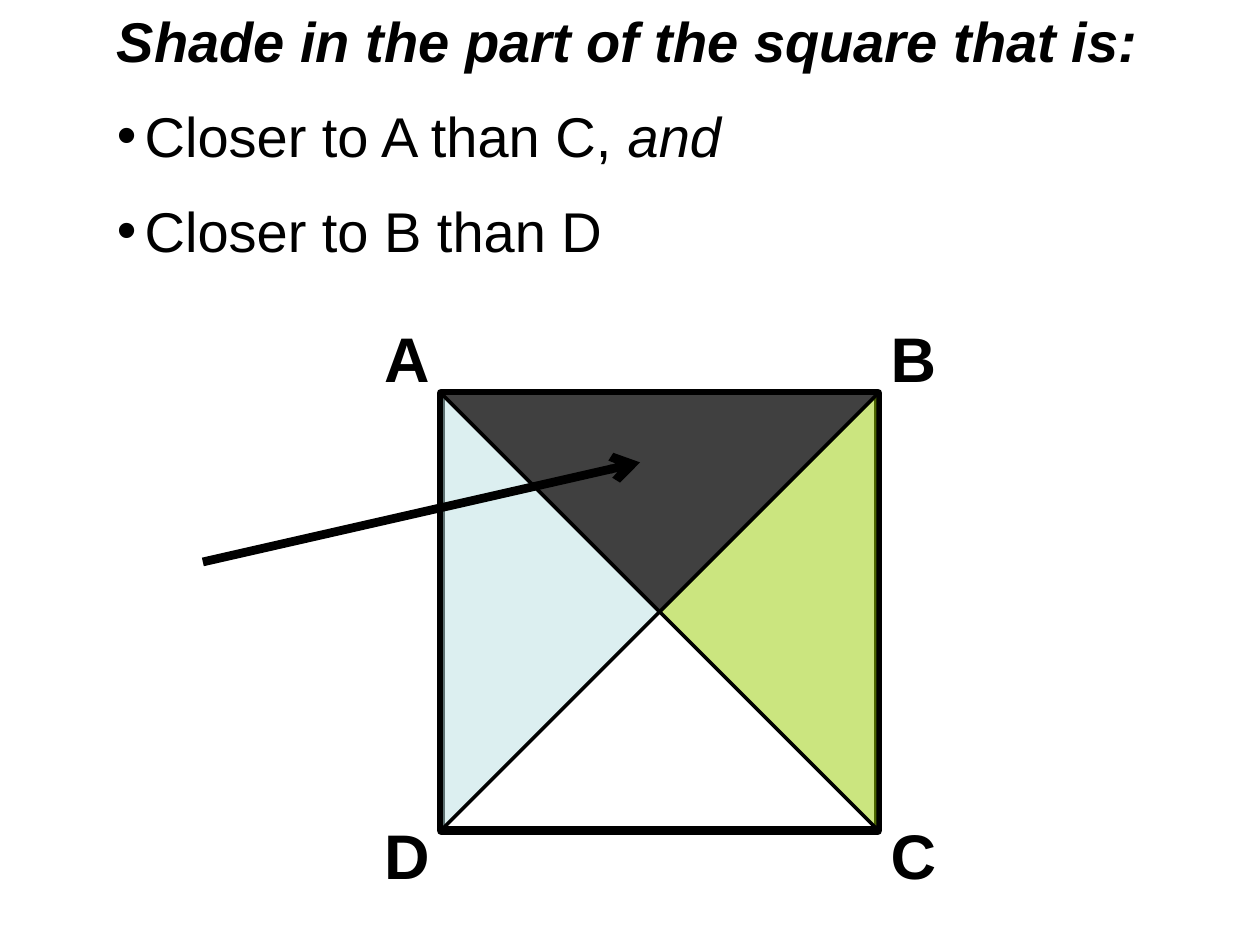
import pptx
import pptx.util
import pptx.dml.color
import pptx.enum.shapes
import pptx.oxml
import pptx.oxml.ns
import lxml.etree

Inches, Pt = pptx.util.Inches, pptx.util.Pt
KINDS = pptx.enum.shapes.MSO_SHAPE
qn = pptx.oxml.ns.qn

COLORS = {"ink": "000000", "blue": "BBE0E3", "green": "99CC00", "dark": "404040"}
BOLD = {"bold": True, "italic": False}
PLAIN = {"bold": False, "italic": False}
SLANT = {"bold": False, "italic": True}
TITLE = {"bold": True, "italic": True}

# Each paragraph: bulleted or not, then its runs
TASK = [
    (False, [("Shade in the part of the square that is:", TITLE)]),
    (True, [("Closer to A than C, ", PLAIN), ("and", SLANT)]),
    (True, [("Closer to B than D", PLAIN)]),
]
LEFT, TOP, SIDE = 3.5, 3.12, 3.47
TAG_W, TAG_H = 0.63, 0.7
TAGS = [
    ("A", 2.95, 2.49),
    ("B", LEFT + SIDE, 2.49),
    ("C", LEFT + SIDE, 6.43),
    ("D", 2.95, 6.43),
]
# Kind, height, turn, fill, opacity in percent
PARTS = [
    (KINDS.RIGHT_TRIANGLE, SIDE, 90, "blue", 50),
    (KINDS.RIGHT_TRIANGLE, SIDE, 180, "green", 50),
    (KINDS.ISOSCELES_TRIANGLE, SIDE / 2, 180, "dark", 100),
]
ARROW = (1.61, 4.46, 5.08, 3.67)
INDENT = 0.22


def rgb(name):
    return pptx.dml.color.RGBColor.from_string(COLORS[name])


def add(parent, tag, **attrs):
    return lxml.etree.SubElement(parent, qn(tag), attrs)


def ink(line, width):
    line.color.rgb = rgb("ink")
    line.width = Pt(width)


def write(slide, box, paras, size):
    """Add a text box whose paragraphs are spaced by half a line."""
    frame = slide.shapes.add_textbox(*map(Inches, box)).text_frame
    frame.word_wrap = True
    for i, (bullet, runs) in enumerate(paras):
        para = frame.paragraphs[0] if i == 0 else frame.add_paragraph()
        props = para._p.get_or_add_pPr()
        add(add(props, "a:spcBef"), "a:spcPct", val="50000")
        if bullet:
            props.set("marL", str(Inches(INDENT)))
            props.set("indent", str(-Inches(INDENT)))
            add(props, "a:buFont", typeface="Arial")
            add(props, "a:buChar", char="•")
        for text, style in runs:
            run = para.add_run()
            run.text = text
            font = {"name": "Arial", "size": Pt(size), **style}
            for key, value in font.items():
                setattr(run.font, key, value)
            run.font.color.rgb = rgb("ink")


def draw(slide, kind, height, width, turn=0, fill=None, alpha=100):
    """Add an outlined shape that hangs from the top of the square."""
    shape = slide.shapes.add_shape(kind, *map(Inches, (LEFT, TOP, SIDE, height)))
    shape.shadow.inherit = False
    shape.rotation = turn
    ink(shape.line, width)
    if fill is None:
        shape.fill.background()
        return
    shape.fill.solid()
    shape.fill.fore_color.rgb = rgb(fill)
    if alpha < 100:
        tint = shape._element.spPr.find(qn("a:solidFill"))[0]
        add(tint, "a:alpha", val=str(alpha * 1000))


def point(slide):
    """Add the arrow into the shaded part."""
    arrow = slide.shapes.add_connector(
        pptx.enum.shapes.MSO_CONNECTOR.STRAIGHT, *map(Inches, ARROW))
    ink(arrow.line, 5)
    add(arrow.line._get_or_add_ln(), "a:tailEnd", type="arrow")
    add(arrow._element.spPr, "a:effectLst")


def main():
    deck = pptx.Presentation()
    deck.slide_width, deck.slide_height = Inches(10), Inches(7.5)
    slide = deck.slides.add_slide(deck.slide_layouts[6])
    draw(slide, KINDS.RECTANGLE, SIDE, 5)
    for name, x, y in TAGS:
        write(slide, (x, y, TAG_W, TAG_H), [(False, [(name, BOLD)])], 36)
    write(slide, (0.83, 0, 9.17, 2.23), TASK, 32)
    for kind, height, turn, fill, alpha in PARTS:
        draw(slide, kind, height, 2, turn, fill, alpha)
    point(slide)
    deck.save("out.pptx")


if __name__ == "__main__":
    main()
